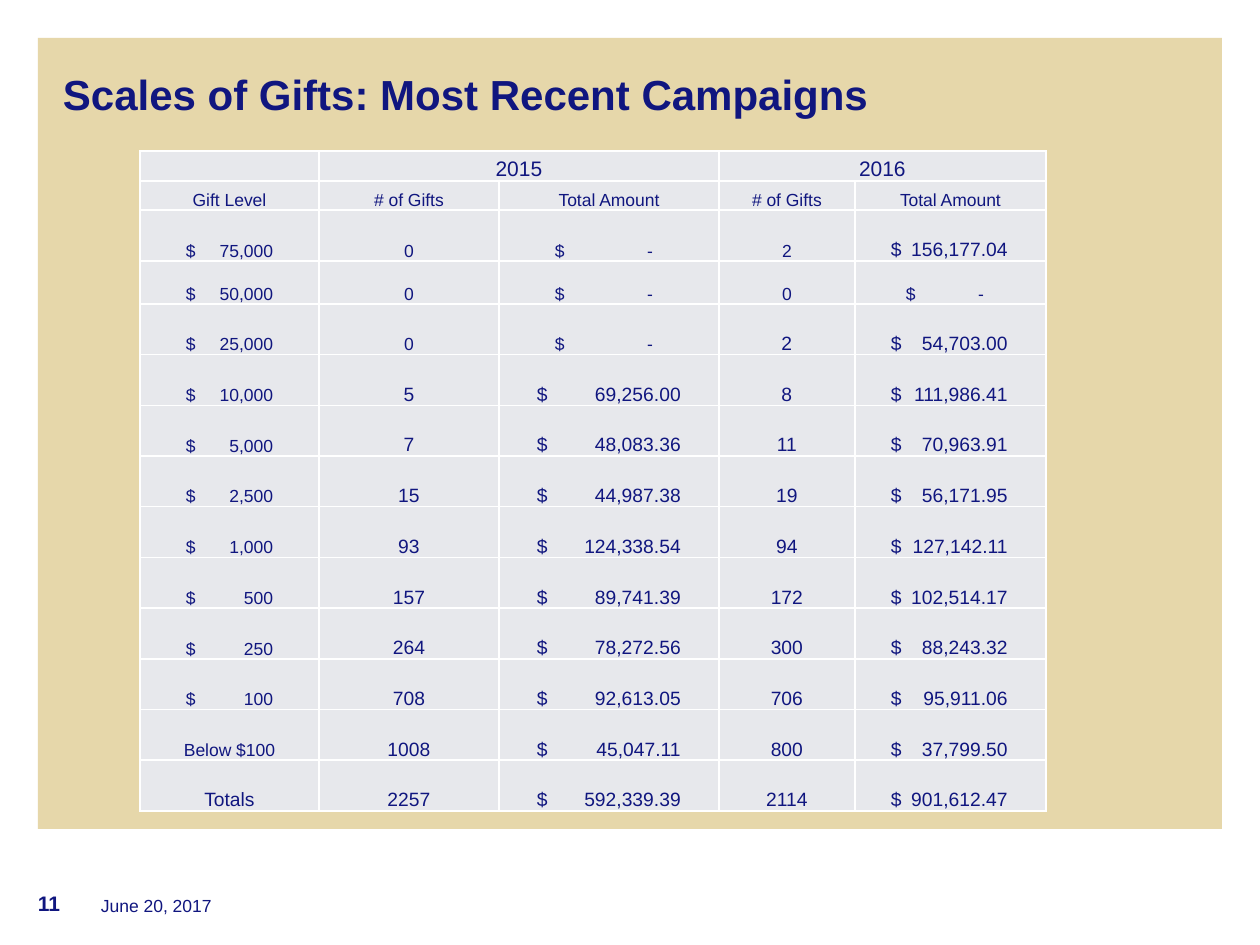
from lxml.etree import SubElement
from pptx import Presentation
from pptx.dml.color import RGBColor
from pptx.enum.shapes import MSO_SHAPE as Shape
from pptx.enum.text import MSO_ANCHOR as Anchor, PP_ALIGN as Align
from pptx.oxml.ns import qn
from pptx.util import Pt

PX = 914400 / 126
NAVY = RGBColor(0x10, 0x16, 0x7F)
SAND = RGBColor(0xE6, 0xD7, 0xAA)
MIST = RGBColor(0xE7, 0xE8, 0xEC)
WHITE = RGBColor(0xFF, 0xFF, 0xFF)
COLUMNS = (179, 180, 220, 136, 191)
HEAD_ROWS = (30, 29, 51, 43)
EVEN_ROWS, EVEN_HEIGHT = 10, 507
HEADINGS = ("Gift Level", "# of Gifts", "Total Amount", "# of Gifts", "Total Amount")
MONEY_EDGES = {0: (46, 133), 2: (38, 182), 4: (36, 153)}
DASH_EDGES = {2: (56, 154), 4: (51, 129)}
SMALL_COUNT_ROWS = {1: 3, 3: 2}
GIFTS = (
    ("75,000", "0", "-", "2", "156,177.04"),
    ("50,000", "0", "-", "0", "-"),
    ("25,000", "0", "-", "2", "54,703.00"),
    ("10,000", "5", "69,256.00", "8", "111,986.41"),
    ("5,000", "7", "48,083.36", "11", "70,963.91"),
    ("2,500", "15", "44,987.38", "19", "56,171.95"),
    ("1,000", "93", "124,338.54", "94", "127,142.11"),
    ("500", "157", "89,741.39", "172", "102,514.17"),
    ("250", "264", "78,272.56", "300", "88,243.32"),
    ("100", "708", "92,613.05", "706", "95,911.06"),
    ("Below $100", "1008", "45,047.11", "800", "37,799.50"),
    ("Totals", "2257", "592,339.39", "2114", "901,612.47"),
)


def px(length):
    """Turn pixels into EMU."""
    return round(length * PX)


def set_all(target, values):
    """Set each named attribute of the target."""
    for name, value in values.items():
        setattr(target, name, value)


def write(para, text, size, bold=False):
    """Add one navy Arial span to a paragraph."""
    span = para.add_run()
    span.text = text
    set_all(span.font, {"name": "Arial", "size": Pt(size), "bold": bold})
    span.font.color.rgb = NAVY


def add_label(page, area, text, size, bold=False, anchor=Anchor.BOTTOM, insets=(0, 0, 0, 10)):
    """Place a text box in the given area."""
    frame = page.shapes.add_textbox(*map(px, area)).text_frame
    left, top, right, bottom = map(px, insets)
    set_all(frame, {"word_wrap": True, "vertical_anchor": anchor, "margin_left": left,
                    "margin_top": top, "margin_right": right, "margin_bottom": bottom})
    write(frame.paragraphs[0], text, size, bold)


def add_panel(page, left, top, width, height):
    """Draw the sand panel with the title at its top."""
    panel = page.shapes.add_shape(Shape.RECTANGLE, *map(px, (left, top, width, height)))
    panel.shadow.inherit = False
    panel.fill.solid()
    panel.fill.fore_color.rgb = SAND
    panel.line.fill.background()
    add_label(page, (left, top, width, 158), "Scales of Gifts: Most Recent Campaigns",
              24, True, Anchor.TOP, (25, 30, 63, 0))


def style_cell(cell):
    """Give a cell its borders, fill, insets and empty-text size."""
    properties = cell._tc.get_or_add_tcPr()
    for side in ("a:lnL", "a:lnR", "a:lnT", "a:lnB"):
        line = SubElement(properties, qn(side), w=str(Pt(1)))
        SubElement(SubElement(line, qn("a:solidFill")), qn("a:srgbClr"), val=str(WHITE))
    cell.fill.solid()
    cell.fill.fore_color.rgb = MIST
    set_all(cell, {"vertical_anchor": Anchor.BOTTOM, "margin_left": px(1),
                   "margin_top": px(1), "margin_right": px(1), "margin_bottom": 0})
    SubElement(cell.text_frame.paragraphs[0]._p, qn("a:endParaRPr"), sz="1000")


def write_centred(cell, text, size):
    """Write centred text in a cell."""
    para = cell.text_frame.paragraphs[0]
    para.alignment = Align.CENTER
    write(para, text, size)


def write_money(cell, amount, size, edges):
    """Write a dollar sign at the left edge and an amount ending at the right edge."""
    sign, end = edges
    cell.margin_left = px(sign)
    para = cell.text_frame.paragraphs[0]
    para.alignment = Align.LEFT
    tabs = SubElement(para._p.get_or_add_pPr(), qn("a:tabLst"))
    SubElement(tabs, qn("a:tab"), pos=str(px(end - sign)), algn="r")
    write(para, f"$\t{amount}", size)


def write_gift(table, index, gift):
    """Fill one row of the gift table."""
    for column, value in enumerate(gift):
        cell = table.cell(index + 2, column)
        if column in SMALL_COUNT_ROWS:
            write_centred(cell, value, 10 if index < SMALL_COUNT_ROWS[column] else 11)
        elif value == "-":
            write_money(cell, value, 10, DASH_EDGES[column])
        elif value[0].isdigit():
            write_money(cell, value, 11 if column else 10, MONEY_EDGES[column])
        else:
            write_centred(cell, value, 11 if value == "Totals" else 10)


def add_gift_table(page, left, top):
    """Build the table of gifts by level and year."""
    heights = [px(height) for height in HEAD_ROWS] + [px(EVEN_HEIGHT) // EVEN_ROWS] * EVEN_ROWS
    table = page.shapes.add_table(len(heights), len(COLUMNS), px(left), px(top),
                                  px(sum(COLUMNS)), sum(heights)).table
    set_all(table, {"first_row": False, "horz_banding": False})
    for row, height in zip(table.rows, heights):
        row.height = height
    for column, width in zip(table.columns, COLUMNS):
        column.width = px(width)
    for cell in table.iter_cells():
        style_cell(cell)
    for column, year in ((1, "2015"), (3, "2016")):
        table.cell(0, column).merge(table.cell(0, column + 1))
        write_centred(table.cell(0, column), year, 12)
    for column, heading in enumerate(HEADINGS):
        write_centred(table.cell(1, column), heading, 10)
    for index, gift in enumerate(GIFTS):
        write_gift(table, index, gift)


def add_footer(page, left, top, height):
    """Place the date and the page number."""
    add_label(page, (left + 63, top, 882, height), "June 20, 2017", 10)
    add_label(page, (left, top, 63, height), "11", 12, True)


def main():
    """Build and save the deck."""
    deck = Presentation()
    set_all(deck, {"slide_width": px(1260), "slide_height": px(945)})
    page = deck.slides.add_slide(deck.slide_layouts[6])
    add_panel(page, 38, 38, 1184, 791)
    add_gift_table(page, 140, 151)
    add_footer(page, 38, 863, 63)
    deck.save("out.pptx")


if __name__ == "__main__":
    main()
